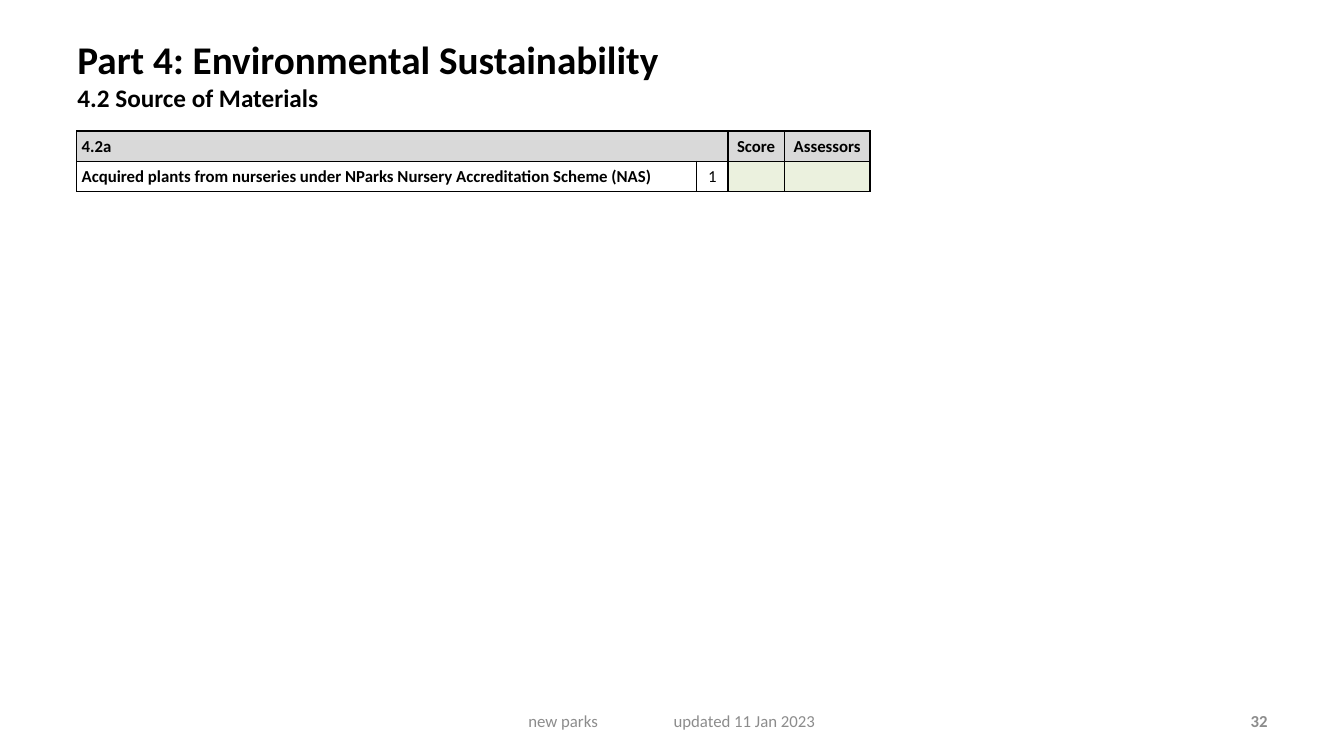
"""Build the score sheet slide for source of materials."""
import pptx
import pptx.util
import pptx.dml.color
import pptx.enum.text
import lxml.etree

Inches, Pt = pptx.util.Inches, pptx.util.Pt
ALIGN = pptx.enum.text.PP_ALIGN
ANCHOR = pptx.enum.text.MSO_ANCHOR
COLORS = {"text": "000000", "footer": "8C8C8C", "header": "D9D9D9",
          "plain": "FFFFFF", "entry": "EBF1DE", "border": "000000"}
A = "{http://schemas.openxmlformats.org/drawingml/2006/main}"


def write(paragraph, text, size, color, bold, align):
    run = paragraph.add_run()
    run.text = text
    paragraph.alignment = align
    for key, value in {"name": "Calibri", "size": Pt(size), "bold": bold}.items():
        setattr(run.font, key, value)
    run.font.color.rgb = pptx.dml.color.RGBColor.from_string(COLORS[color])


def add_frame(left, top, width, height, anchor):
    frame = slide.shapes.add_textbox(*map(Inches, (left, top, width, height))).text_frame
    frame.word_wrap = True
    frame.vertical_anchor = anchor
    return frame


deck = pptx.Presentation()
deck.slide_width, deck.slide_height = Inches(13.33), Inches(7.5)
slide = deck.slides.add_slide(deck.slide_layouts[6])

heading = add_frame(0.67, 0.3, 10.36, 0.99, ANCHOR.TOP)
write(heading.paragraphs[0], "Part 4: Environmental Sustainability", 28, "text", True, ALIGN.LEFT)
write(heading.add_paragraph(), "4.2 Source of Materials", 18, "text", True, ALIGN.LEFT)

column_widths = [6.15, 0.31, 0.56, 0.85]
row_height = 0.3
rows = [
    [("4.2a", "header"), ("", "header"), ("Score", "header"), ("Assessors", "header")],
    [("Acquired plants from nurseries under NParks Nursery Accreditation Scheme (NAS)", "plain"),
     ("1", "plain"), ("", "entry"), ("", "entry")],
]
criteria = slide.shapes.add_table(
    len(rows), len(column_widths), Inches(0.76), Inches(1.3),
    Inches(sum(column_widths)), Inches(row_height * len(rows))).table
for column, width in zip(criteria.columns, column_widths):
    column.width = Inches(width)
for row in criteria.rows:
    row.height = Inches(row_height)
criteria.cell(0, 0).merge(criteria.cell(0, 1))

for r, entries in enumerate(rows):
    for c, (text, fill) in enumerate(entries):
        cell = criteria.cell(r, c)
        for side in ("left", "right", "top", "bottom"):
            setattr(cell, f"margin_{side}", Inches(0.05))
        cell.vertical_anchor = ANCHOR.MIDDLE
        paragraph = cell.text_frame.paragraphs[0]
        if text:
            write(paragraph, text, 12, "text", text != "1", ALIGN.CENTER if c else ALIGN.LEFT)
        else:
            lxml.etree.SubElement(paragraph._p, A + "endParaRPr", sz="1200")
        properties = cell._tc.get_or_add_tcPr()
        for edge in ("lnL", "lnR", "lnT", "lnB"):
            border = lxml.etree.SubElement(properties, A + edge, w=str(Pt(1)))
            paint = lxml.etree.SubElement(border, A + "solidFill")
            lxml.etree.SubElement(paint, A + "srgbClr", val=COLORS["border"])
        cell.fill.solid()
        cell.fill.fore_color.rgb = pptx.dml.color.RGBColor.from_string(COLORS[fill])

footer = add_frame(4.56, 6.95, 4.22, 0.4, ANCHOR.MIDDLE)
footer.margin_left = Inches(0.68)
footer_line = footer.paragraphs[0]
tabs = lxml.etree.SubElement(footer_line._p.get_or_add_pPr(), A + "tabLst")
lxml.etree.SubElement(tabs, A + "tab", pos=str(Inches(1.44)), algn="l")
write(footer_line, "new parks\tupdated 11 Jan 2023", 12, "footer", False, ALIGN.LEFT)

page_number = add_frame(9.56, 6.95, 3.11, 0.4, ANCHOR.MIDDLE)
write(page_number.paragraphs[0], "32", 12, "footer", True, ALIGN.RIGHT)

deck.save("out.pptx")
